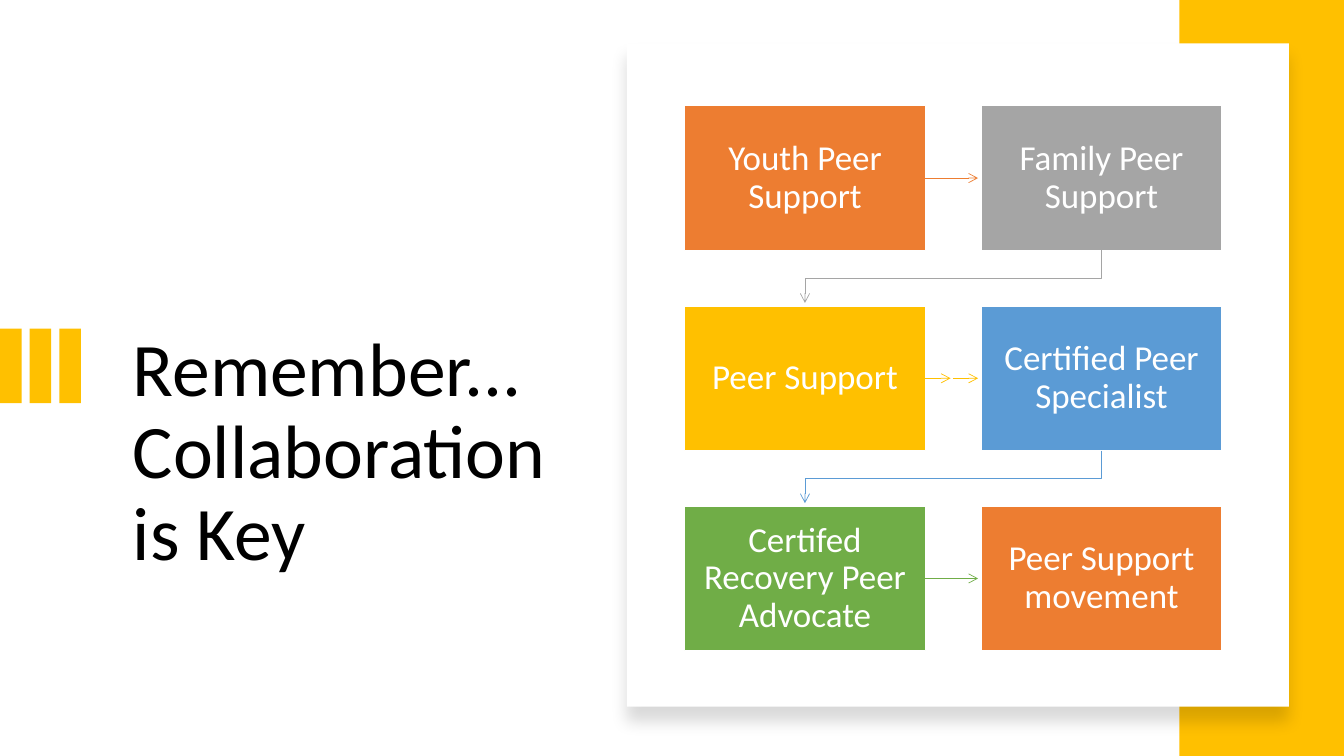
from lxml.etree import SubElement
from pptx import Presentation
from pptx.dml.color import RGBColor
from pptx.enum.shapes import MSO_CONNECTOR as Connector, MSO_SHAPE as Shape
from pptx.enum.text import MSO_ANCHOR as Anchor, PP_ALIGN as Align
from pptx.oxml.ns import qn
from pptx.util import Pt

COLORS = {
    "white": "FFFFFF", "black": "000000", "gold": "FFC000", "orange": "ED7D31",
    "gray": "A5A5A5", "blue": "5B9BD5", "green": "70AD47",
}
FONT = "Calibri"
STEPS = [
    ("Youth Peer Support", "orange"), ("Family Peer Support", "gray"),
    ("Peer Support", "gold"), ("Certified Peer Specialist", "blue"),
    ("Certifed Recovery Peer Advocate", "green"), ("Peer Support movement", "orange"),
]


def rgb(name):
    return RGBColor.from_string(COLORS[name])


def set_all(target, values):
    for name, value in values.items():
        setattr(target, name, value)


def add_rect(page, box, color, outline=None):
    rect = page.shapes.add_shape(Shape.RECTANGLE, *map(Pt, box))
    rect.shadow.inherit = False
    rect.fill.solid()
    rect.fill.fore_color.rgb = rgb(color)
    if outline:
        rect.line.color.rgb = rgb(outline)
        rect.line.width = Pt(1)
    else:
        rect.line.fill.background()
    return rect


def write(shape, text, size, color, align, frame_values):
    frame = shape.text_frame
    set_all(frame, {"word_wrap": True, **frame_values})
    para = frame.paragraphs[0]
    set_all(para, {"alignment": align, "line_spacing": 0.9})
    span = para.add_run()
    span.text = text
    set_all(span.font, {"name": FONT, "size": Pt(size)})
    span.font.color.rgb = rgb(color)


def style_arrow(arrow, color):
    arrow.line.color.rgb = rgb(color)
    arrow.line.width = Pt(0.5)
    SubElement(arrow.line._get_or_add_ln(), qn("a:tailEnd"), type="arrow")


def add_straight_arrow(page, start, end, y, color, source=None):
    arrow = page.shapes.add_connector(
        Connector.STRAIGHT, Pt(start), Pt(y), Pt(end), Pt(y))
    if source is not None:
        arrow.begin_connect(source, 3)
    style_arrow(arrow, color)
    SubElement(arrow._element.spPr, qn("a:effectLst"))


def add_return_arrow(page, start_x, end_x, y, color):
    bend, tip = y + 20, y + 37.5
    builder = page.shapes.build_freeform(Pt(start_x), Pt(y))
    corners = [(start_x, bend), (end_x, bend), (end_x, tip)]
    builder.add_line_segments([(Pt(x), Pt(level)) for x, level in corners], close=False)
    arrow = builder.convert_to_shape()
    arrow.shadow.inherit = False
    arrow.fill.background()
    style_arrow(arrow, color)


def add_title(page, box):
    left, top, width, height = box
    # Accent bars at the slide edge
    for index in range(3):
        add_rect(page, (index * 21.2, top + 1.4, 15.4, 53.3), "gold")
    title = page.shapes.add_textbox(*map(Pt, box))
    write(title, "Remember... Collaboration is Key", 54, "black", Align.LEFT,
          {"vertical_anchor": Anchor.TOP})


def add_panel(page, box):
    panel = add_rect(page, box, "white")
    effects = panel._element.spPr.find(qn("a:effectLst"))
    shadow = SubElement(effects, qn("a:outerShdw"), blurRad=str(Pt(11)),
                        dist=str(Pt(10)), dir="5400000", algn="t", rotWithShape="0")
    shade = SubElement(shadow, qn("a:srgbClr"), val=COLORS["black"])
    SubElement(shade, qn("a:alpha"), val="15000")


def add_flow(page, box):
    left, top, width, height = box
    step_width, step_height = 172, 103.4
    column_pitch, row_pitch = width - step_width, (height - step_height) / 2
    gap = column_pitch - step_width
    inset = Pt(8.9)
    margins = {f"margin_{side}": inset for side in ("left", "top", "right", "bottom")}

    for index, (text, color) in enumerate(STEPS):
        row, column = divmod(index, 2)
        x, y = left + column * column_pitch, top + row * row_pitch
        step = add_rect(page, (x, y, step_width, step_height), color, "white")
        write(step, text, 25, "white", Align.CENTER,
              {"vertical_anchor": Anchor.MIDDLE, **margins})

        # Arrow to the next step; the middle row has a double one
        if column == 0:
            start, middle = x + step_width, y + step_height / 2
            end = start + gap - 2.2
            if row == 1:
                half = (start + end) / 2
                add_straight_arrow(page, start, half - 0.8, middle, color, step)
                add_straight_arrow(page, half + 0.8, end, middle, color)
            else:
                add_straight_arrow(page, start, end, middle, color, step)
        elif row < 2:
            center = x + step_width / 2
            add_return_arrow(page, center, center - column_pitch, y + step_height, color)


def main():
    deck = Presentation()
    set_all(deck, {"slide_width": Pt(960), "slide_height": Pt(540)})
    page = deck.slides.add_slide(deck.slide_layouts[6])
    add_title(page, (87.8, 233.3, 317.5, 188))
    add_rect(page, (842.4, 0, 117.6, 540), "gold")
    add_panel(page, (447.8, 31, 473, 473.8))
    add_flow(page, (489, 75.5, 383.8, 389.4))
    deck.save("out.pptx")


if __name__ == "__main__":
    main()
